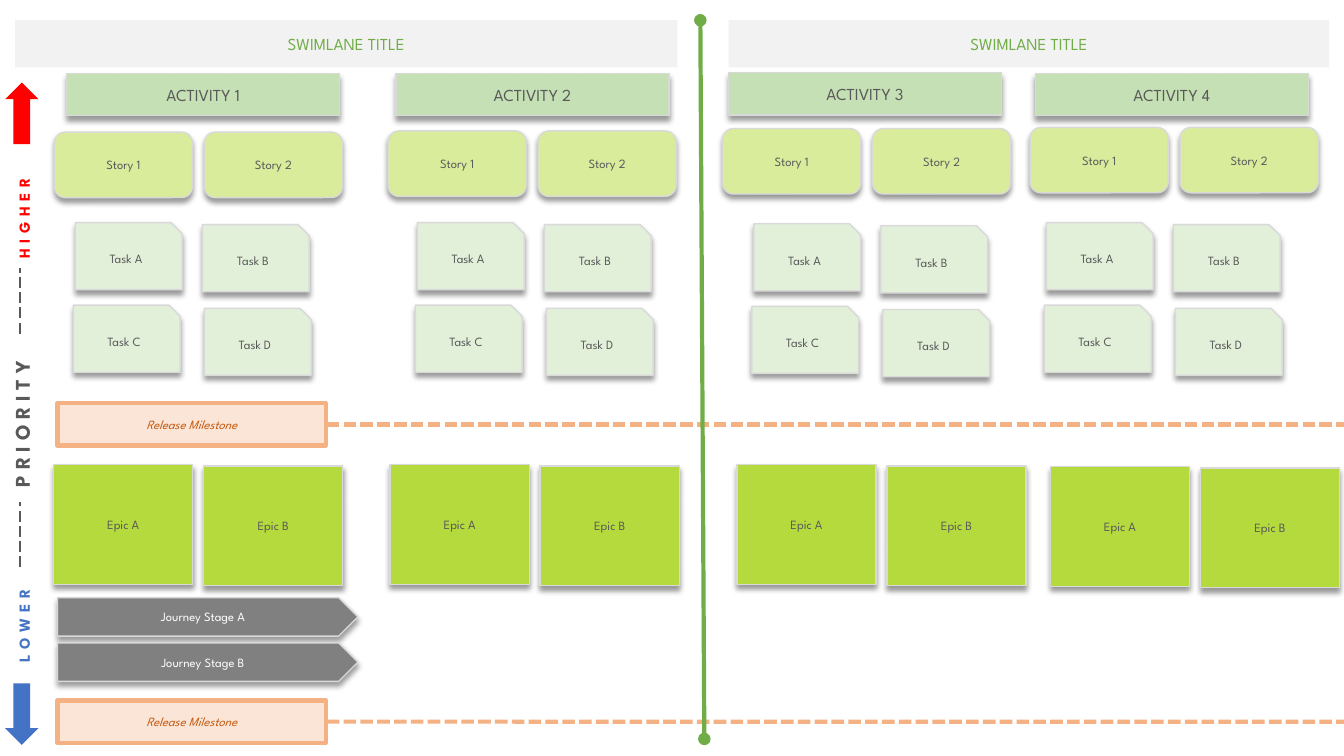
"""Builds a story map slide with swimlanes, activities, epics and release milestones."""
from dataclasses import dataclass
from typing import Any

from lxml import etree
from pptx import Presentation
from pptx import util as u
from pptx.dml.color import RGBColor
from pptx.enum import dml, shapes, text
from pptx.oxml.ns import qn

KIND = shapes.MSO_SHAPE
DASH = dml.MSO_LINE


@dataclass(frozen=True)
class Theme:
    font: str = "League Spartan"
    ink: str = "595959"
    white: str = "FFFFFF"
    edge: str = "D9D9D9"
    lane: str = "F2F2F2"
    green: str = "70AD47"
    activity: str = "C5E0B4"
    story: str = "D9EC9C"
    task: str = "E2F0D9"
    epic: str = "B5DA3E"
    journey: str = "808080"
    milestone: str = "FBE5D6"
    milestone_edge: str = "F4B183"
    milestone_ink: str = "C55A11"
    higher: str = "FF0000"
    lower: str = "4472C4"
    heading_size: float = 12
    card_size: float = 9
    level_size: float = 11
    priority_size: float = 15


THEME = Theme()


@dataclass(frozen=True)
class CardStyle:
    kind: Any
    width: float
    height: float
    fill: str
    ink: str = THEME.ink
    size: float = THEME.card_size
    edge: str | None = THEME.edge
    edge_width: float = 1
    shadow: bool = True
    italic: bool = False


@dataclass(frozen=True)
class Column:
    """Left and top, in centimetres, of each card group under one activity."""
    activity: tuple[float, float]
    story: tuple[float, float]
    task: tuple[float, float]
    epic: tuple[float, float]


@dataclass(frozen=True)
class PriorityWord:
    wording: str
    size: float
    color: str


ACTIVITY = CardStyle(KIND.RECTANGLE, 6.88, 1.07, THEME.activity, size=THEME.heading_size)
STORY = CardStyle(KIND.ROUNDED_RECTANGLE, 3.48, 1.65, THEME.story)
TASK = CardStyle(KIND.SNIP_1_RECTANGLE, 2.69, 1.69, THEME.task)
EPIC = CardStyle(KIND.RECTANGLE, 3.51, 3.02, THEME.epic)
JOURNEY = CardStyle(KIND.PENTAGON, 7.57, 0.97, THEME.journey, THEME.white)
MILESTONE = CardStyle(KIND.RECTANGLE, 6.76, 1.07, THEME.milestone, THEME.milestone_ink,
                      edge=THEME.milestone_edge, edge_width=3, shadow=False, italic=True)

COLUMNS = [
    Column((1.68, 1.85), (1.37, 3.33), (1.9, 5.61), (1.35, 11.71)),
    Column((9.98, 1.85), (9.78, 3.3), (10.52, 5.61), (9.83, 11.71)),
    Column((18.36, 1.83), (18.21, 3.24), (19, 5.64), (18.57, 11.71)),
    Column((26.09, 1.85), (25.96, 3.21), (26.37, 5.61), (26.47, 11.76)),
]
PAIR_STEP = 3.78
TASK_OFFSETS = {"A": (0, 0), "B": (3.2, 0.05), "C": (-0.05, 2.08), "D": (3.25, 2.16)}
LANES = [(0.38, 16.69), (18.36, 15.14)]
JOURNEY_TOPS = {"A": 15.06, "B": 16.2}
MILESTONE_TOPS = [10.16, 17.65]
SLIDE_WIDTH, SLIDE_HEIGHT = 33.87, 19.05
PRIORITY_WORDS = [
    PriorityWord("LOWER", THEME.level_size, THEME.lower),
    PriorityWord("\tPRIORITY", THEME.priority_size, THEME.ink),
    PriorityWord("\tHIGHER", THEME.level_size, THEME.higher),
]
PRIORITY_TABS = [4.41, 10.17]


def apply(target: Any, values: dict[str, Any]) -> None:
    for attribute, value in values.items():
        setattr(target, attribute, value)


def style_font(font: Any, size: float, color: str, **extra: Any) -> None:
    apply(font, {"name": THEME.font, "size": u.Pt(size), **extra})
    font.color.rgb = RGBColor.from_string(color)


def add_shadow(card: Any) -> None:
    effects = card._element.spPr.find(qn("a:effectLst"))
    shadow = etree.SubElement(effects, qn("a:outerShdw"), blurRad="50800", dist="38100",
                              dir="5400000", algn="t", rotWithShape="0")
    black = etree.SubElement(shadow, qn("a:srgbClr"), val="000000")
    etree.SubElement(black, qn("a:alpha"), val="40000")


def add_card(canvas: Any, style: CardStyle, left: float, top: float, label: str = "") -> Any:
    card = canvas.add_shape(style.kind, *map(u.Cm, (left, top, style.width, style.height)))
    card.shadow.inherit = False
    card.fill.solid()
    card.fill.fore_color.rgb = RGBColor.from_string(style.fill)
    if style.edge:
        card.line.color.rgb = RGBColor.from_string(style.edge)
        card.line.width = u.Pt(style.edge_width)
    else:
        card.line.fill.background()
    if style.shadow:
        add_shadow(card)
    if label:
        frame = card.text_frame
        apply(frame, {"word_wrap": True, "vertical_anchor": text.MSO_ANCHOR.MIDDLE})
        paragraph = frame.paragraphs[0]
        apply(paragraph, {"text": label, "alignment": text.PP_ALIGN.CENTER})
        style_font(paragraph.runs[0].font, style.size, style.ink, italic=style.italic)
    return card


def add_rule(canvas: Any, start: tuple[float, float], end: tuple[float, float], color: str,
             width: float, dash: Any = None, ends: str | None = None) -> Any:
    rule = canvas.add_connector(shapes.MSO_CONNECTOR.STRAIGHT, *map(u.Cm, (*start, *end)))
    rule.line.color.rgb = RGBColor.from_string(color)
    apply(rule.line, {"width": u.Pt(width), "dash_style": dash})
    if ends:
        for tag in ("a:headEnd", "a:tailEnd"):
            etree.SubElement(rule.line._get_or_add_ln(), qn(tag), type=ends)
    etree.SubElement(rule._element.spPr, qn("a:effectLst"))
    return rule


def add_column(canvas: Any, number: int, column: Column) -> None:
    add_card(canvas, ACTIVITY, *column.activity, f"ACTIVITY {number}")
    for index, letter in enumerate("AB"):
        shift = index * PAIR_STEP
        add_card(canvas, STORY, column.story[0] + shift, column.story[1], f"Story {index + 1}")
        add_card(canvas, EPIC, column.epic[0] + shift, column.epic[1] + index * 0.03,
                 f"Epic {letter}")
    for letter, (across, down) in TASK_OFFSETS.items():
        add_card(canvas, TASK, column.task[0] + across, column.task[1] + down, f"Task {letter}")


def add_milestone(canvas: Any, top: float) -> None:
    milestone = add_card(canvas, MILESTONE, 1.45, top, "Release Milestone")
    middle = top + MILESTONE.height / 2
    release = add_rule(canvas, (1.45, middle), (SLIDE_WIDTH, middle), THEME.milestone_edge, 3,
                       DASH.SQUARE_DOT)
    release.line._get_or_add_ln().find(qn("a:prstDash")).set("val", "sysDash")
    release.begin_connect(milestone, 1)
    milestone._element.addprevious(release._element)


def add_priority_axis(canvas: Any) -> None:
    axis = canvas.add_group_shape().shapes
    band = CardStyle(KIND.RECTANGLE, 14.94, 0.69, THEME.white, edge=None, shadow=False)
    priority = add_card(axis, band, -6.93, 9.12)
    priority.rotation = 270
    apply(priority.text_frame, {"word_wrap": True, "vertical_anchor": text.MSO_ANCHOR.MIDDLE})
    paragraph = priority.text_frame.paragraphs[0]
    paragraph.alignment = text.PP_ALIGN.LEFT
    tabs = etree.SubElement(paragraph._p.get_or_add_pPr(), qn("a:tabLst"))
    for stop in PRIORITY_TABS:
        etree.SubElement(tabs, qn("a:tab"), pos=str(u.Cm(stop)), algn="l")
    for word in PRIORITY_WORDS:
        run = paragraph.add_run()
        run.text = word.wording
        style_font(run.font, word.size, word.color, bold=True)
        run._r.get_or_add_rPr().set("spc", "400")
    for color, top, turn in ((THEME.higher, 2.08, 0), (THEME.lower, 17.22, 180)):
        arrow = CardStyle(KIND.UP_ARROW, 0.84, 1.55, color, edge=None, shadow=False)
        add_card(axis, arrow, 0.13, top).rotation = turn
    for bottom in (8.41, 14.3):
        add_rule(axis, (0.5, bottom), (0.5, bottom - 1.65), THEME.ink, 1, DASH.LONG_DASH)


def main() -> None:
    deck = Presentation()
    apply(deck, {"slide_width": u.Cm(SLIDE_WIDTH), "slide_height": u.Cm(SLIDE_HEIGHT)})
    canvas = deck.slides.add_slide(deck.slide_layouts[6]).shapes
    for left, width in LANES:
        lane = CardStyle(KIND.RECTANGLE, width, 1.19, THEME.lane, THEME.green,
                         THEME.heading_size, edge=None, shadow=False)
        add_card(canvas, lane, left, 0.51, "SWIMLANE TITLE")
    for top in MILESTONE_TOPS:
        add_milestone(canvas, top)
    add_rule(canvas, (17.65, 0.51), (17.75, 18.62), THEME.green, 3, ends="oval")
    add_priority_axis(canvas)
    for number, column in enumerate(COLUMNS, 1):
        add_column(canvas, number, column)
    for letter, top in JOURNEY_TOPS.items():
        add_card(canvas, JOURNEY, 1.45, top, f"Journey Stage {letter}")
    deck.save("out.pptx")


if __name__ == "__main__":
    main()
